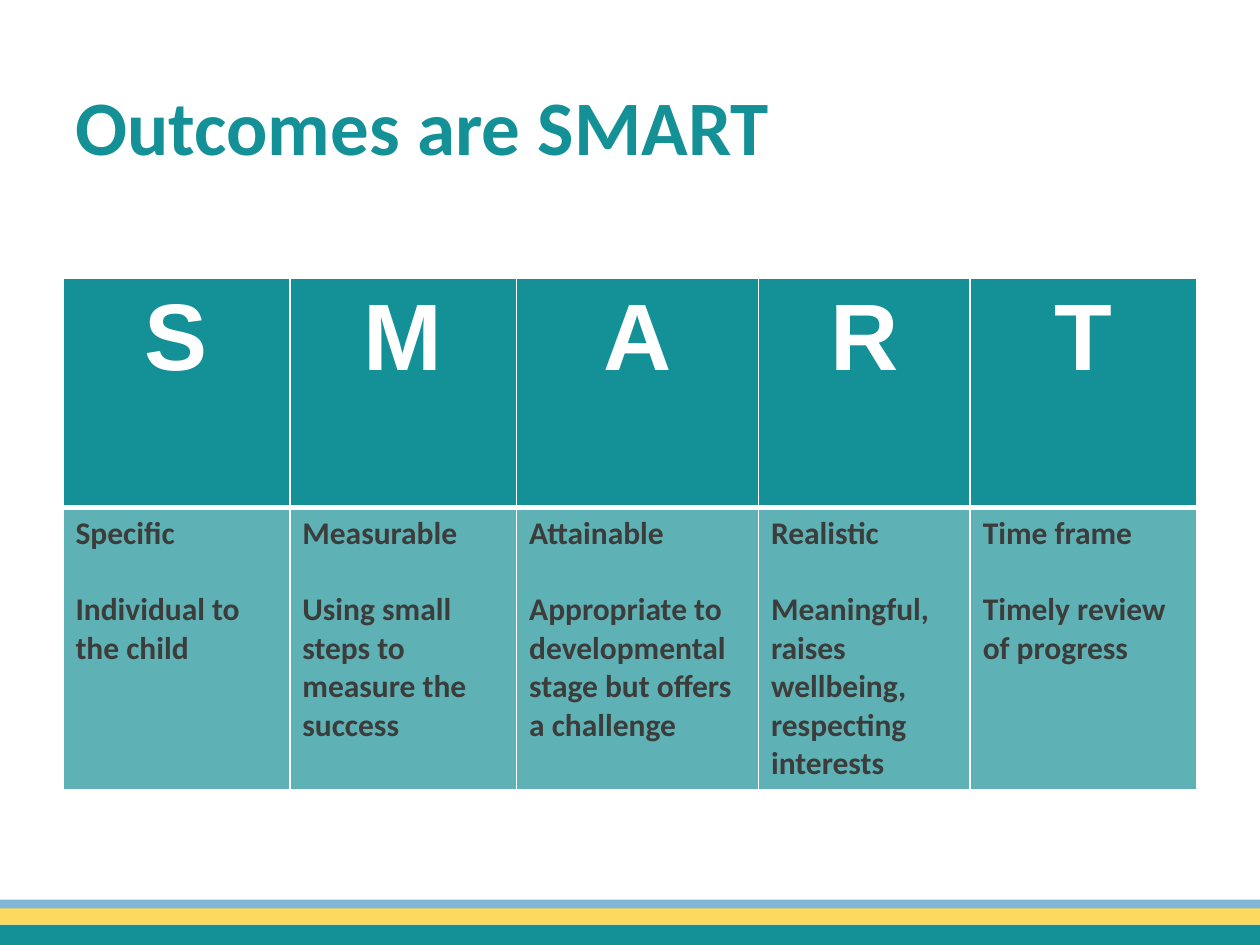
"""Build the slide on SMART outcomes: a title, a five-column table and footer stripes."""
from dataclasses import dataclass

from lxml.etree import SubElement
from pptx import Presentation
from pptx.dml.color import RGBColor as Rgb
from pptx.enum.shapes import MSO_SHAPE as Shape
from pptx.enum.text import MSO_ANCHOR as Anchor, PP_ALIGN as Align
from pptx.oxml.ns import qn
from pptx.slide import Slide
from pptx.table import Table, _Cell as Cell
from pptx.text.text import Font
from pptx.util import Inches, Pt

HUES = {"teal": "149197", "title": "149196", "cell": "1A9195", "blue": "82B6D9",
        "gold": "FDD95E", "text": "3C3C3B", "white": "FFFFFF"}


@dataclass
class Stripe:
    top: float
    high: float
    hue: str


@dataclass
class Goal:
    mark: str
    name: str
    note: str
    wide: float


STRIPES = [Stripe(7.14, 0.08, "blue"), Stripe(7.21, 0.13, "gold"), Stripe(7.34, 0.16, "teal")]
GOALS = [
    Goal("S", "Specific", "Individual to the child", 1.8),
    Goal("M", "Measurable", "Using small steps to measure the success", 1.8),
    Goal("A", "Attainable", "Appropriate to developmental stage but offers a challenge", 1.92),
    Goal("R", "Realistic", "Meaningful, raises wellbeing, respecting interests", 1.68),
    Goal("T", "Time frame", "Timely review of progress", 1.8),
]
ROWS = [1.82, 2.23]


def color(hue: str) -> Rgb:
    """Look up a colour by its name."""
    return Rgb.from_string(HUES[hue])


def style(font: Font, face: str, size: int, hue: str) -> None:
    """Set a bold font."""
    font.name, font.size, font.bold = face, Pt(size), True
    font.color.rgb = color(hue)


def draw_stripe(slide: Slide, bar: Stripe) -> None:
    """Draw one stripe across the slide."""
    box = slide.shapes.add_shape(Shape.RECTANGLE, 0, Inches(bar.top), Inches(10), Inches(bar.high))
    box.shadow.inherit = False
    box.fill.solid()
    box.fill.fore_color.rgb = color(bar.hue)
    box.line.fill.background()


def draw_title(slide: Slide, text: str) -> None:
    """Fill and place the title."""
    title = slide.shapes.title
    title.left, title.top = Inches(0.5), Inches(0.13)
    title.width, title.height = Inches(7.81), Inches(1.72)
    frame = title.text_frame
    frame.text, frame.vertical_anchor = text, Anchor.MIDDLE
    para = frame.paragraphs[0]
    para.alignment = Align.LEFT
    style(para.font, "Calibri", 44, "title")


def paint(cell: Cell, hue: str, base: int, alpha: int = 100) -> None:
    """Give a cell white borders and a fill."""
    props = cell._tc.get_or_add_tcPr()
    for side, size in (("L", 1), ("R", 1), ("T", 1), ("B", base)):
        line = SubElement(props, qn(f"a:ln{side}"), w=str(Pt(size)))
        SubElement(SubElement(line, qn("a:solidFill")), qn("a:srgbClr"), val=HUES["white"])
    cell.fill.solid()
    cell.fill.fore_color.rgb = color(hue)
    if alpha < 100:
        tint = props.find(qn("a:solidFill")).find(qn("a:srgbClr"))
        SubElement(tint, qn("a:alpha"), val=str(alpha * 1000))


def fill_goal(table: Table, col: int, goal: Goal) -> None:
    """Write one goal into its column."""
    table.columns[col].width = Inches(goal.wide)
    head, body = table.cell(0, col), table.cell(1, col)
    paint(head, "teal", 3)
    head.text = goal.mark
    para = head.text_frame.paragraphs[0]
    para.alignment = Align.CENTER
    style(para.font, "Arial", 54, "white")
    paint(body, "cell", 1, 70)
    body.text = f"{goal.name}\n{goal.note}"
    for para in body.text_frame.paragraphs:
        style(para.font, "Calibri", 18, "text")
    para.space_before = Pt(22)


def main() -> None:
    """Build and save the slide."""
    deck = Presentation()
    deck.slide_width, deck.slide_height = Inches(10), Inches(7.5)
    slide = deck.slides.add_slide(deck.slide_layouts[5])
    for bar in STRIPES:
        draw_stripe(slide, bar)
    draw_title(slide, "Outcomes are\u00a0SMART".replace("\u00a0", " "))
    table = slide.shapes.add_table(len(ROWS), len(GOALS), Inches(0.5), Inches(2.21),
                                   Inches(9), Inches(sum(ROWS))).table
    for row, high in zip(table.rows, ROWS):
        row.height = Inches(high)
    for col, goal in enumerate(GOALS):
        fill_goal(table, col, goal)
    deck.save("out.pptx")


if __name__ == "__main__":
    main()
